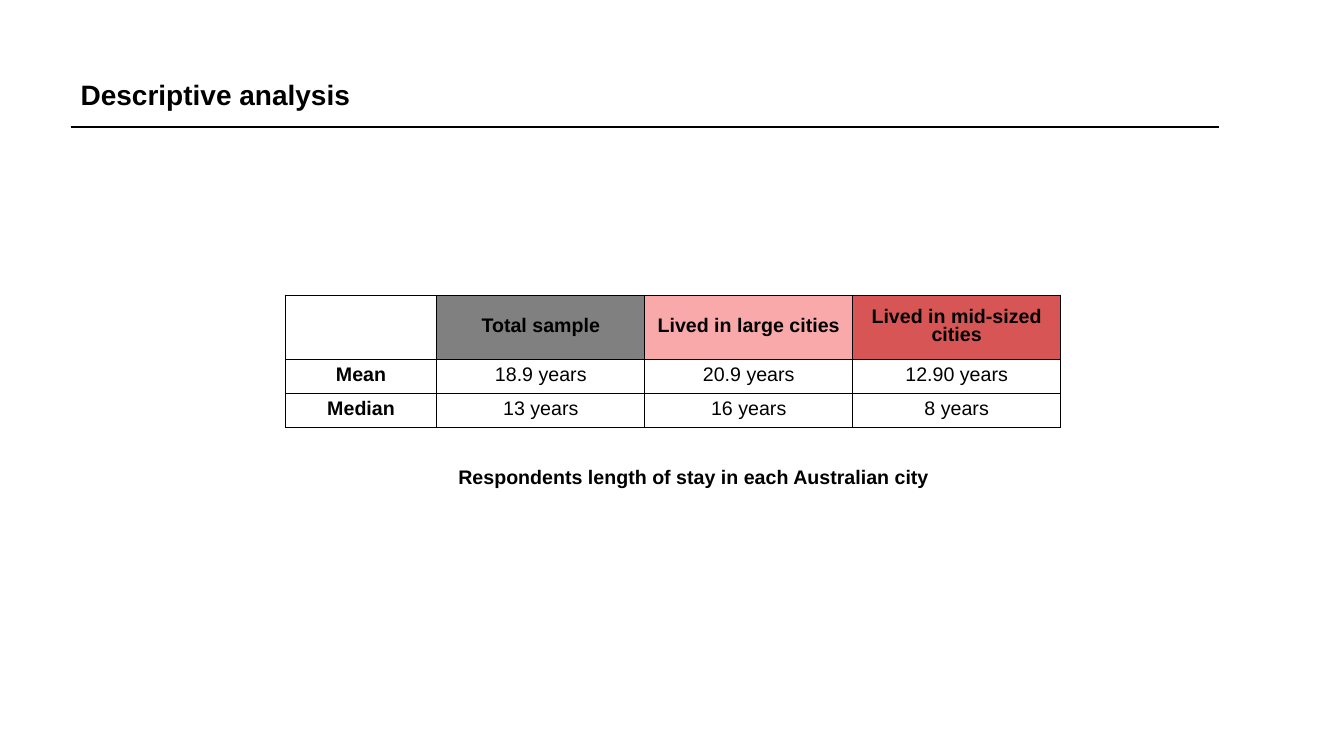
from dataclasses import dataclass

from lxml import etree
from pptx import Presentation
from pptx.dml.color import RGBColor
from pptx.enum.shapes import MSO_CONNECTOR
from pptx.enum.text import MSO_ANCHOR, MSO_AUTO_SIZE, PP_ALIGN
from pptx.oxml.ns import qn
from pptx.util import Cm, Pt

STRAIGHT = MSO_CONNECTOR.STRAIGHT
TOP, MIDDLE = MSO_ANCHOR.TOP, MSO_ANCHOR.MIDDLE
LEFT, CENTER = PP_ALIGN.LEFT, PP_ALIGN.CENTER
GROW = MSO_AUTO_SIZE.SHAPE_TO_FIT_TEXT
TITLE_ONLY = 5


@dataclass(frozen=True)
class Theme:
    """Colours, font and type sizes of the slide."""
    font: str = "Arial"
    ink: str = "000000"
    paper: str = "FFFFFF"
    total: str = "808080"
    large: str = "F9A9A9"
    mid_sized: str = "D75555"
    title_size: int = 20
    text_size: int = 14
    line_width: int = 1


THEME = Theme()
HEADER_FILLS = (THEME.paper, THEME.total, THEME.large, THEME.mid_sized)
LENGTH_OF_STAY = (
    ("", "Total sample", "Lived in large cities", "Lived in mid-sized cities"),
    ("Mean", "18.9 years", "20.9 years", "12.90 years"),
    ("Median", "13 years", "16 years", "8 years"),
)
COLUMN_WIDTHS = (3.82, 5.24, 5.24, 5.24)
ROW_HEIGHTS = (1.62, 0.86, 0.86)


def add_text(paragraph, text, size, bold, align):
    """Write one formatted run into a paragraph."""
    paragraph.alignment = align
    run = paragraph.add_run()
    run.text = text
    run.font.name = THEME.font
    run.font.size = Pt(size)
    run.font.bold = bold
    run.font.color.rgb = RGBColor.from_string(THEME.ink)


def set_title(slide, text):
    """Move the title placeholder above the rule and fill it."""
    title = slide.shapes.title
    title.left, title.top, title.width, title.height = Cm(1.78), Cm(1.83), Cm(16.97), Cm(0.99)
    frame = title.text_frame
    frame.word_wrap = True
    frame.auto_size = GROW
    frame.vertical_anchor = TOP
    frame.margin_left = frame.margin_right = Cm(0.25)
    frame.margin_top, frame.margin_bottom = Cm(0.13), Cm(0)
    add_text(frame.paragraphs[0], text, THEME.title_size, True, LEFT)


def add_rule(slide, left, right, y):
    """Draw a horizontal line."""
    rule = slide.shapes.add_connector(STRAIGHT, Cm(left), Cm(y), Cm(right), Cm(y))
    rule.line.color.rgb = RGBColor.from_string(THEME.ink)
    rule.line.width = Pt(THEME.line_width)
    etree.SubElement(rule._element.spPr, qn("a:effectLst"))


def add_borders(cell):
    """Give a cell a thin line on all four sides."""
    properties = cell._tc.get_or_add_tcPr()
    for position, side in enumerate(("a:lnL", "a:lnR", "a:lnT", "a:lnB")):
        border = etree.Element(qn(side), w=str(Pt(THEME.line_width)))
        fill = etree.SubElement(border, qn("a:solidFill"))
        etree.SubElement(fill, qn("a:srgbClr"), val=THEME.ink)
        properties.insert(position, border)


def fill_cell(cell, text, fill, bold):
    """Format one table cell and write its text."""
    cell.fill.solid()
    cell.fill.fore_color.rgb = RGBColor.from_string(fill)
    add_borders(cell)
    cell.vertical_anchor = MIDDLE
    cell.margin_left = cell.margin_right = Cm(0.18)
    cell.margin_top = cell.margin_bottom = Cm(0)
    if text:
        paragraph = cell.text_frame.paragraphs[0]
        paragraph.line_spacing = Pt(13)
        paragraph.space_after = Pt(6)
        add_text(paragraph, text, THEME.text_size, bold, CENTER)


def add_stay_table(slide, left, top):
    """Add the table of mean and median lengths of stay."""
    table = slide.shapes.add_table(
        len(ROW_HEIGHTS), len(COLUMN_WIDTHS), Cm(left), Cm(top),
        Cm(sum(COLUMN_WIDTHS)), Cm(sum(ROW_HEIGHTS))).table
    table.first_row = table.horz_banding = False
    for column, width in zip(table.columns, COLUMN_WIDTHS):
        column.width = Cm(width)
    for row, height in zip(table.rows, ROW_HEIGHTS):
        row.height = Cm(height)
    for r, entries in enumerate(LENGTH_OF_STAY):
        for c, entry in enumerate(entries):
            fill = HEADER_FILLS[c] if r == 0 else THEME.paper
            fill_cell(table.cell(r, c), entry, fill, r == 0 or c == 0)


def add_caption(slide, text, left, top, width, height):
    """Add a bold caption."""
    caption = slide.shapes.add_textbox(Cm(left), Cm(top), Cm(width), Cm(height))
    frame = caption.text_frame
    frame.word_wrap = True
    frame.auto_size = GROW
    add_text(frame.paragraphs[0], text, THEME.text_size, True, LEFT)


def main():
    """Build and save the slide."""
    presentation = Presentation()
    presentation.slide_width, presentation.slide_height = Cm(33.87), Cm(19.05)
    slide = presentation.slides.add_slide(presentation.slide_layouts[TITLE_ONLY])
    set_title(slide, "Descriptive analysis")
    add_rule(slide, 1.78, 30.73, 3.2)
    add_stay_table(slide, 7.19, 7.44)
    add_caption(slide, "Respondents length of stay in each Australian city",
                11.3, 11.58, 12.45, 0.86)
    presentation.save("out.pptx")


if __name__ == "__main__":
    main()
